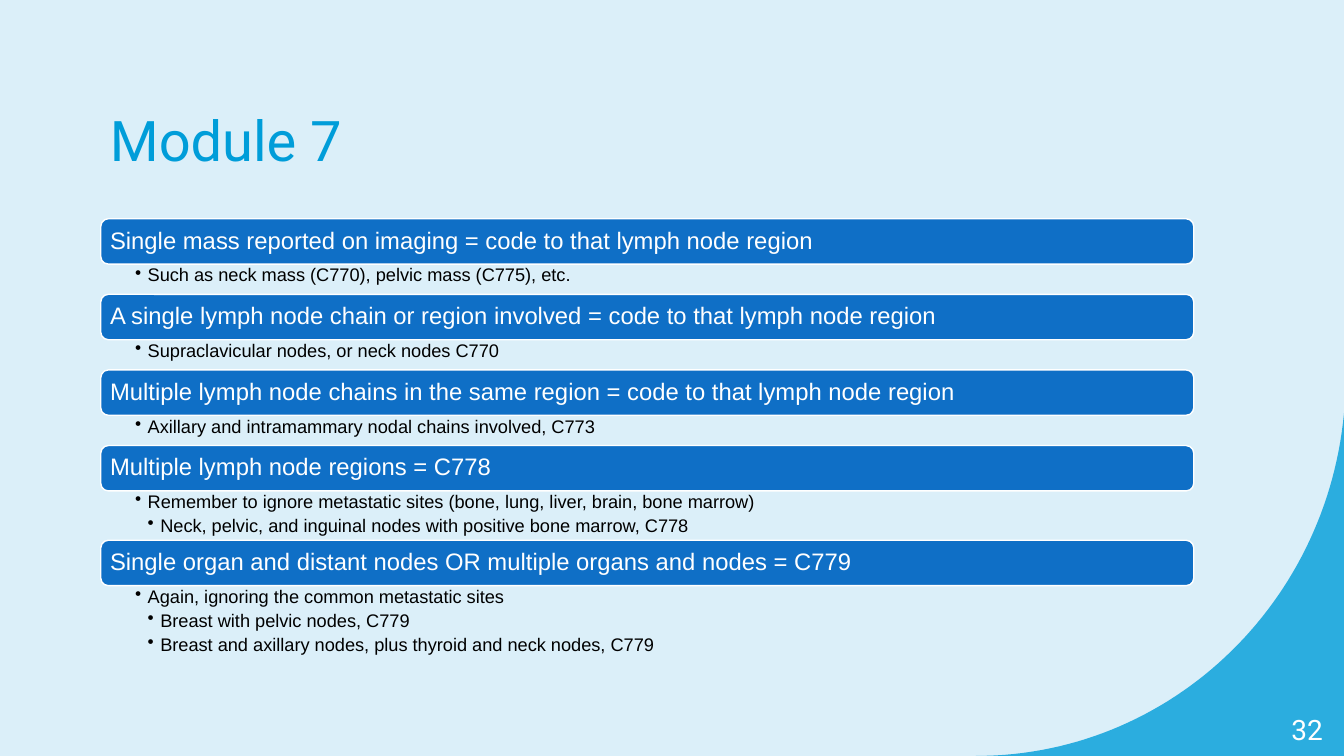
from dataclasses import dataclass
from lxml.etree import SubElement
from pptx import Presentation
from pptx.dml.color import RGBColor
from pptx.enum.shapes import MSO_SHAPE
from pptx.enum.text import MSO_ANCHOR, MSO_AUTO_SIZE, PP_ALIGN
from pptx.oxml.ns import qn
from pptx.util import Inches, Pt


@dataclass(frozen=True)
class Theme:
    back: str = "DBEFF9"
    accent: str = "009DD9"
    bar: str = "0F6FC6"
    white: str = "FFFFFF"
    black: str = "000000"
    head: str = "Roboto"
    body: str = "Arial"
    title: int = 40
    page: int = 20
    topic: int = 17
    note: int = 13


THEME = Theme()
LEFT, TOP, WIDTH = 1, 2.17, 10.84
BAR = 0.45
DEPTHS = {1: 0.3, 2: 0.49, 3: 0.73}  # height of a list by number of lines

# Each topic has its notes as (level, text)
TOPICS = [
    ("Single mass reported on imaging = code to that lymph node region",
     [(1, "Such as neck mass (C770), pelvic mass (C775), etc.")]),
    ("A single lymph node chain or region involved = code to that lymph node region",
     [(1, "Supraclavicular nodes, or neck nodes C770")]),
    ("Multiple lymph node chains in the same region = code to that lymph node region",
     [(1, "Axillary and intramammary nodal chains involved, C773")]),
    ("Multiple lymph node regions = C778",
     [(1, "Remember to ignore metastatic sites (bone, lung, liver, brain, bone marrow)"),
      (2, "Neck, pelvic, and inguinal nodes with positive bone marrow, C778")]),
    ("Single organ and distant nodes OR multiple organs and nodes = C779",
     [(1, "Again, ignoring the common metastatic sites"),
      (2, "Breast with pelvic nodes, C779"),
      (2, "Breast and axillary nodes, plus thyroid and neck nodes, C779")]),
]


def color(code):
    return RGBColor.from_string(code)


def style(para, face, size, code):
    for run in para.runs:
        run.font.name = face
        run.font.size = Pt(size)
        run.font.color.rgb = color(code)


def inset(frame, left, top, right, bottom):
    frame.margin_left, frame.margin_top = Inches(left), Inches(top)
    frame.margin_right, frame.margin_bottom = Inches(right), Inches(bottom)


def add_curve(slide):
    # Corner shape: a cubic curve closed through the bottom right corner
    knots = [(9.68, 7.5), (11.58, 7.5), (13.15, 6.02), (13.33, 4.1)]
    steps = 60
    dots = []
    for i in range(steps + 1):
        t = i / steps
        parts = ((1 - t) ** 3, 3 * t * (1 - t) ** 2, 3 * t * t * (1 - t), t ** 3)
        dots.append(tuple(Inches(sum(w * knot[axis] for w, knot in zip(parts, knots)))
                          for axis in (0, 1)))
    form = slide.shapes.build_freeform(*dots[0])
    form.add_line_segments(dots[1:] + [(Inches(13.33), Inches(7.5))], close=True)
    shape = form.convert_to_shape()
    shape.shadow.inherit = False
    shape.line.fill.background()
    shape.fill.solid()
    shape.fill.fore_color.rgb = color(THEME.accent)
    tint = shape.fill._xPr.find(qn("a:solidFill"))[0]
    SubElement(tint, qn("a:alpha")).set("val", "80000")


def add_title(slide, text):
    title = slide.shapes.title
    title.left, title.top = Inches(0.99), Inches(0.65)
    title.width, title.height = Inches(WIDTH), Inches(1.45)
    frame = title.text_frame
    frame.text = text
    frame.auto_size = MSO_AUTO_SIZE.NONE
    frame.vertical_anchor = MSO_ANCHOR.MIDDLE
    para = frame.paragraphs[0]
    para.alignment = PP_ALIGN.LEFT
    style(para, THEME.head, THEME.title, THEME.accent)


def add_bar(slide, top, text):
    bar = slide.shapes.add_shape(MSO_SHAPE.ROUNDED_RECTANGLE, Inches(LEFT),
                                 Inches(top), Inches(WIDTH), Inches(BAR))
    bar.shadow.inherit = False
    bar.fill.solid()
    bar.fill.fore_color.rgb = color(THEME.bar)
    bar.line.color.rgb = color(THEME.white)
    bar.line.width = Pt(1)
    frame = bar.text_frame
    inset(frame, 0.07, 0.07, 0.07, 0.07)
    frame.vertical_anchor = MSO_ANCHOR.MIDDLE
    frame.text = text
    para = frame.paragraphs[0]
    para.alignment = PP_ALIGN.LEFT
    para.line_spacing = 0.9
    style(para, THEME.body, THEME.topic, THEME.white)


def add_notes(slide, top, notes):
    box = slide.shapes.add_textbox(Inches(LEFT), Inches(top), Inches(WIDTH),
                                   Inches(DEPTHS[len(notes)]))
    frame = box.text_frame
    frame.word_wrap = True
    inset(frame, 0.34, 0.02, 0.13, 0.02)
    frame.text = "\n".join(text for _, text in notes)
    for para, (level, _) in zip(frame.paragraphs, notes):
        para.level = level
        props = para._p.get_or_add_pPr()
        props.set("marL", str(Inches(0.125 * level)))
        props.set("indent", str(Inches(-0.125)))
        SubElement(props, qn("a:buChar")).set("char", "•")
        para.line_spacing = 0.9
        para.space_after = Pt(3)
        style(para, THEME.body, THEME.note, THEME.black)


def add_page(slide, text):
    box = slide.shapes.add_textbox(Inches(12.46), Inches(7.04), Inches(0.76), Inches(0.4))
    frame = box.text_frame
    frame.word_wrap = True
    frame.vertical_anchor = MSO_ANCHOR.MIDDLE
    frame.text = text
    para = frame.paragraphs[0]
    para.alignment = PP_ALIGN.RIGHT
    style(para, THEME.head, THEME.page, THEME.white)


def main():
    deck = Presentation()
    deck.slide_width, deck.slide_height = Inches(13.33), Inches(7.5)
    slide = deck.slides.add_slide(deck.slide_layouts[5])
    slide.background.fill.solid()
    slide.background.fill.fore_color.rgb = color(THEME.back)

    add_curve(slide)
    add_title(slide, "Module 7")

    # Bars and their lists, stacked from the top
    top = TOP
    for text, notes in TOPICS:
        add_bar(slide, top, text)
        add_notes(slide, top + BAR, notes)
        top += BAR + DEPTHS[len(notes)]

    add_page(slide, "32")
    deck.save("out.pptx")


if __name__ == "__main__":
    main()
